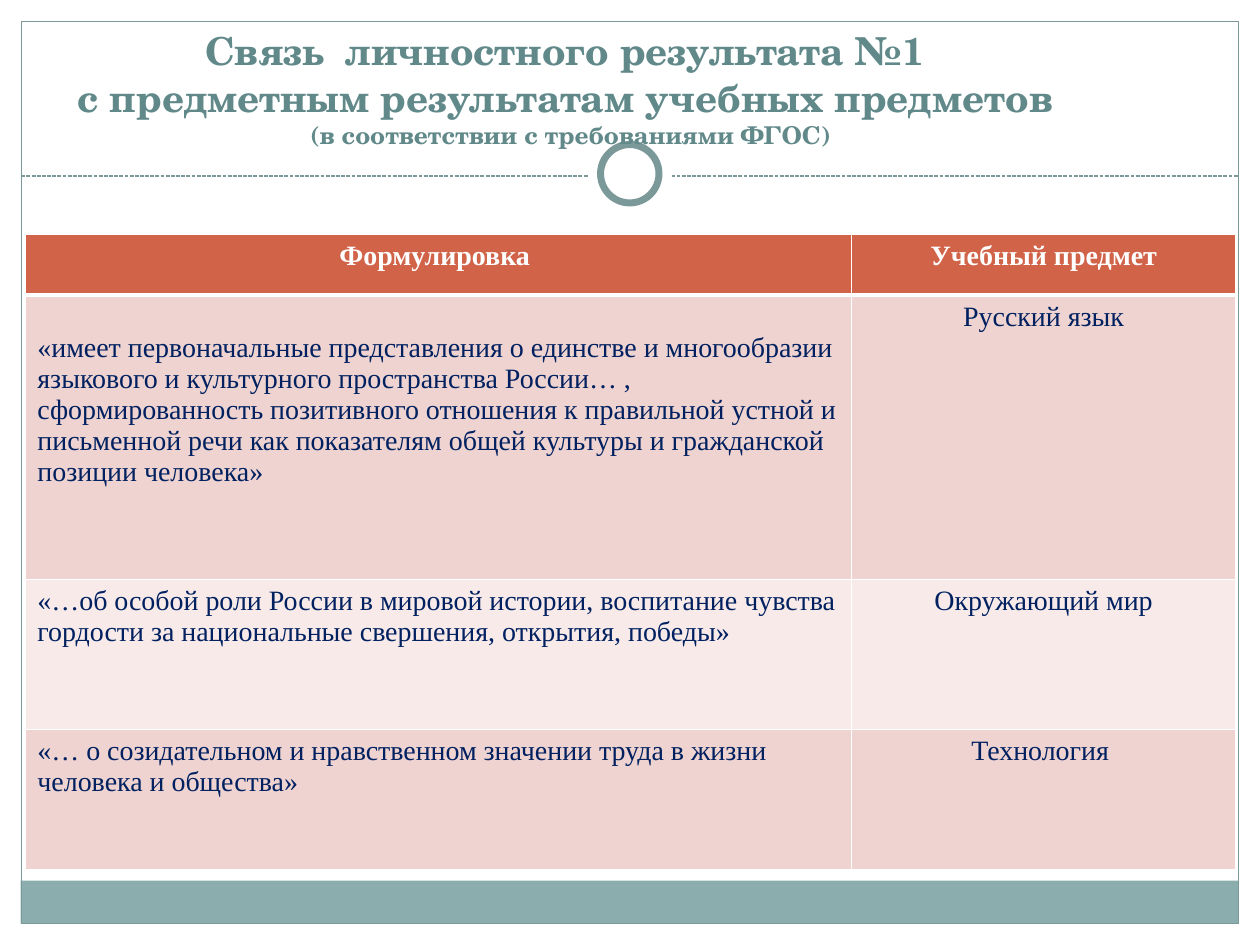
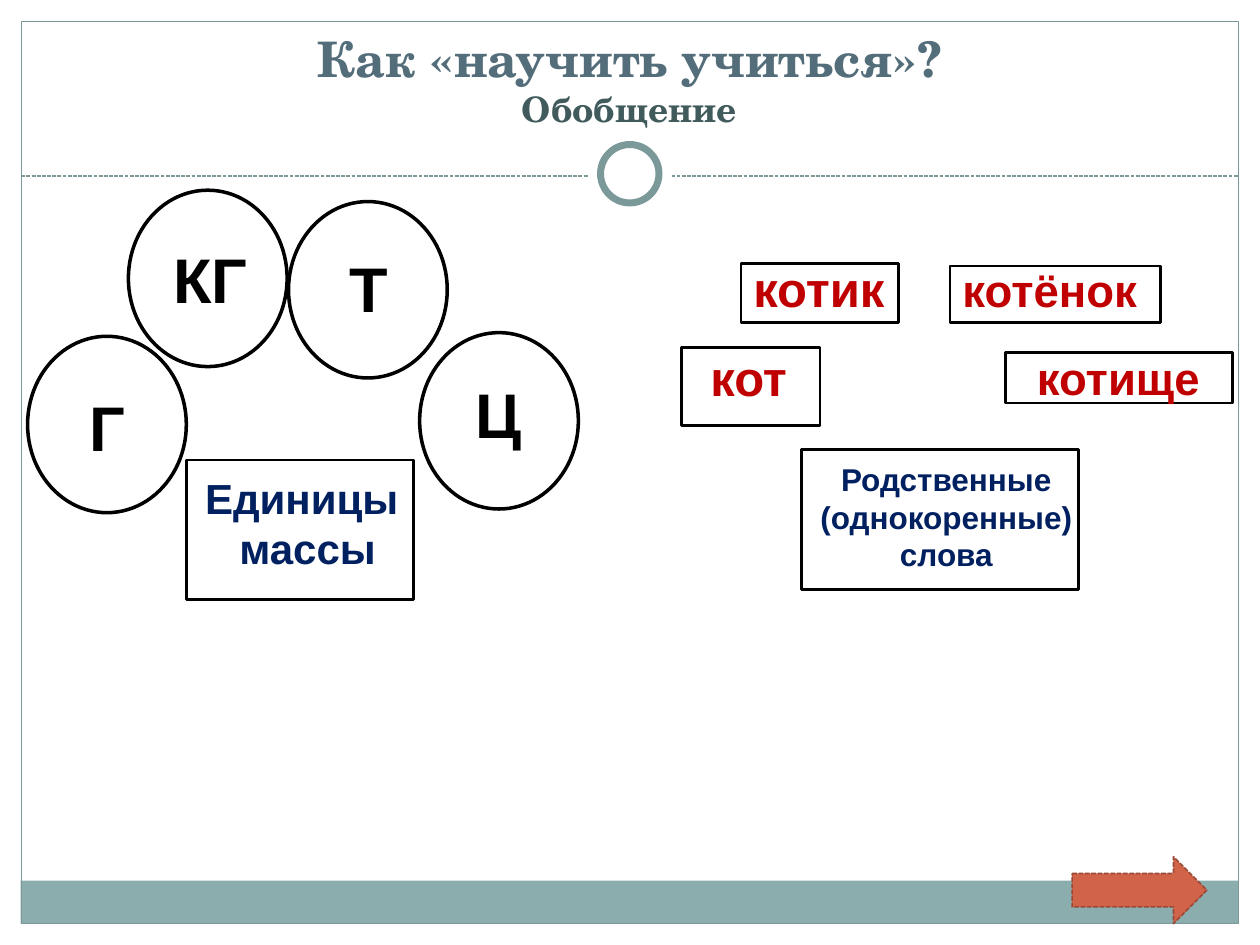
"""Builds two school slides: a table of learning results and a generalisation exercise."""
from lxml import etree
from pptx import Presentation
from pptx.dml.color import RGBColor
from pptx.enum.dml import MSO_LINE
from pptx.enum.shapes import MSO_CONNECTOR, MSO_SHAPE as Preset
from pptx.enum.text import MSO_ANCHOR as Anchor, MSO_AUTO_SIZE as AutoSize, PP_ALIGN as Align
from pptx.oxml.ns import qn
from pptx.util import Pt

WHITE, BLACK, NAVY, RED = "FFFFFF", "000000", "002060", "C00000"
TEAL, BAND, ORANGE, RUST = "7C999A", "8CADAE", "D16349", "9B4936"
PINK, PALE = "EED3D0", "F7EAE9"
TITLE_FONT, TABLE_FONT, LABEL_FONT = "TeX Gyre Schola", "Times New Roman", "Arial"
colour = RGBColor.from_string


def write(frame, text, size=18, font=LABEL_FONT, color=BLACK, bold=True, align=Align.CENTER):
    """Fill the empty first paragraph of a frame, or add another one."""
    paragraph = frame.add_paragraph() if frame.text else frame.paragraphs[0]
    paragraph.alignment = align
    run = paragraph.add_run()
    run.text = text
    run.font.size, run.font.name, run.font.bold = Pt(size), font, bold
    run.font.color.rgb = colour(color)


def draw(slide, preset, box, fill=None, line=None, width=1.5):
    """Add a flat preset shape; box is left, top, width and height."""
    shape = slide.shapes.add_shape(preset, *map(Pt, box))
    shape.shadow.inherit = False
    if fill:
        shape.fill.solid()
        shape.fill.fore_color.rgb = colour(fill)
    else:
        shape.fill.background()
    if line:
        shape.line.color.rgb = colour(line)
        shape.line.width = Pt(width)
    else:
        shape.line.fill.background()
    return shape


presentation = Presentation()
presentation.slide_width, presentation.slide_height = Pt(720), Pt(540)
layout = presentation.slide_layouts[5]
results = presentation.slides.add_slide(layout)
exercise = presentation.slides.add_slide(layout)

footer = draw(results, Preset.RECTANGLE, (11.8, 503.3, 695.6, 24.5), fill=BAND)
border = draw(results, Preset.RECTANGLE, (12.2, 12.2, 695.5, 515.5), line=TEAL, width=0.75)
divider = results.shapes.add_connector(MSO_CONNECTOR.STRAIGHT, Pt(12.2), Pt(100.6), Pt(707.7), Pt(100.6))
divider.line.color.rgb = colour(TEAL)
divider.line.width = Pt(0.75)
divider.line.dash_style = MSO_LINE.SQUARE_DOT
etree.SubElement(divider.element.spPr, qn("a:effectLst"))
gap = draw(results, Preset.OVAL, (336, 75.6, 48, 48), fill=WHITE)
ring = draw(results, Preset.OVAL, (343.2, 82.6, 33.4, 33.4), fill=WHITE, line=TEAL, width=4)
for position, shape in enumerate((footer, border, divider, gap, ring), start=2):
    layout.shapes.element.insert(position, shape.element)

titles = [
    (results, (8.6, 15.1, 635, 102.2), 32, [
        ("Связь  личностного результата №1 ", 22, "61898A"),
        ("с предметным результатам учебных предметов ", 22, "61898A"),
        ("(в соответствии с требованиями ФГОС)", 14, "61898A")]),
    (exercise, (23.8, 18, 671.8, 59.8), 3.6, [
        ("Как «научить учиться»?", 28, "546D7A"),
        ("Обобщение", 20, "415B5C")]),
]
for slide, box, bottom_margin, lines in titles:
    title = slide.shapes.title
    title.left, title.top, title.width, title.height = map(Pt, box)
    frame = title.text_frame
    frame.auto_size = AutoSize.NONE
    frame.vertical_anchor = Anchor.BOTTOM
    frame.margin_bottom = Pt(bottom_margin)
    for text, size, color in lines:
        write(frame, text, size, TITLE_FONT, color)

rows = [
    ("Формулировка ", "Учебный предмет", 34.5, ORANGE),
    ("«имеет первоначальные представления о единстве и многообразии языкового и культурного "
     "пространства России… , сформированность позитивного отношения к правильной устной и "
     "письменной речи как показателям общей культуры и гражданской позиции человека»",
     "Русский язык", 162.6, PINK),
    ("«…об особой роли России в мировой истории, воспитание чувства гордости за национальные "
     "свершения, открытия, победы»", "Окружающий мир", 85.7, PALE),
    ("«… о созидательном и нравственном значении труда в жизни человека и общества»",
     "Технология ", 80, PINK),
]
table = results.shapes.add_table(len(rows), 2, Pt(14.2), Pt(134), Pt(692), Pt(362.8)).table
table.columns[0].width, table.columns[1].width = Pt(472.4), Pt(219.6)
for row, (wording, subject, height, fill) in enumerate(rows):
    table.rows[row].height = Pt(height)
    header = row == 0
    for column, text in enumerate((wording, subject)):
        cell = table.cell(row, column)
        properties = cell._tc.get_or_add_tcPr()
        for side in ("lnL", "lnR", "lnT", "lnB"):
            heavy = (header and side == "lnB") or (row == 1 and side == "lnT")
            edge = etree.SubElement(properties, qn(f"a:{side}"), w=str(Pt(3 if heavy else 1)))
            paint = etree.SubElement(edge, qn("a:solidFill"))
            etree.SubElement(paint, qn("a:srgbClr"), val=WHITE)
        cell.fill.solid()
        cell.fill.fore_color.rgb = colour(fill)
        write(cell.text_frame, text, 16, TABLE_FONT, WHITE if header else NAVY, header,
              Align.CENTER if header or column else Align.LEFT)
table.cell(1, 0).margin_top = Pt(21.4)

arrow = draw(exercise, Preset.RIGHT_ARROW, (612.7, 489.6, 77, 38.2), ORANGE, RUST, 0.9)
arrow.line.dash_style = MSO_LINE.SQUARE_DOT

for left, top in ((15.8, 192.2), (239.8, 190.1), (164.9, 115.2), (73.4, 108.7)):
    draw(exercise, Preset.OVAL, (left, top, 90.7, 100.8), line=BLACK, width=2)

frames = [
    (106.6, 262.8, 129.6, 79.9), (457.9, 257, 158.4, 79.9), (574.6, 201.6, 129.6, 28.8),
    (542.9, 151.9, 120.2, 32.4), (423.4, 150.5, 90, 33.8), (389.5, 198.7, 79.2, 44.6),
]
for box in frames:
    draw(exercise, Preset.RECTANGLE, box, line=BLACK)

labels = [
    (["Г"], (38.9, 218.2, 45.4, 51.1), 36, BLACK, Align.CENTER),
    (["КГ"], (86.4, 133.9, 67.7, 51.1), 36, BLACK, Align.CENTER),
    (["Т"], (187.9, 139, 45.4, 51.1), 36, BLACK, Align.CENTER),
    (["Ц"], (262.1, 211, 45.4, 51.1), 36, BLACK, Align.CENTER),
    (["Единицы", " массы"], (109.4, 266.4, 126, 65.5), 24, NAVY, Align.CENTER),
    (["кот"], (398.9, 195.1, 59, 41), 28, RED, Align.LEFT),
    (["котик"], (423.4, 144, 90, 41), 28, RED, Align.LEFT),
    (["котёнок"], (542.9, 146.2, 115.2, 38.9), 26, RED, Align.LEFT),
    (["котище"], (585.4, 196.6, 108.7, 38.9), 26, RED, Align.LEFT),
    (["Родственные", "(однокоренные)", "слова"], (455.8, 259.2, 169.9, 72.7), 18, NAVY, Align.CENTER),
]
for lines, box, size, color, align in labels:
    frame = exercise.shapes.add_textbox(*map(Pt, box)).text_frame
    frame.word_wrap = size == 36
    frame.auto_size = AutoSize.SHAPE_TO_FIT_TEXT
    for text in lines:
        write(frame, text, size, color=color, align=align)

presentation.save("out.pptx")
